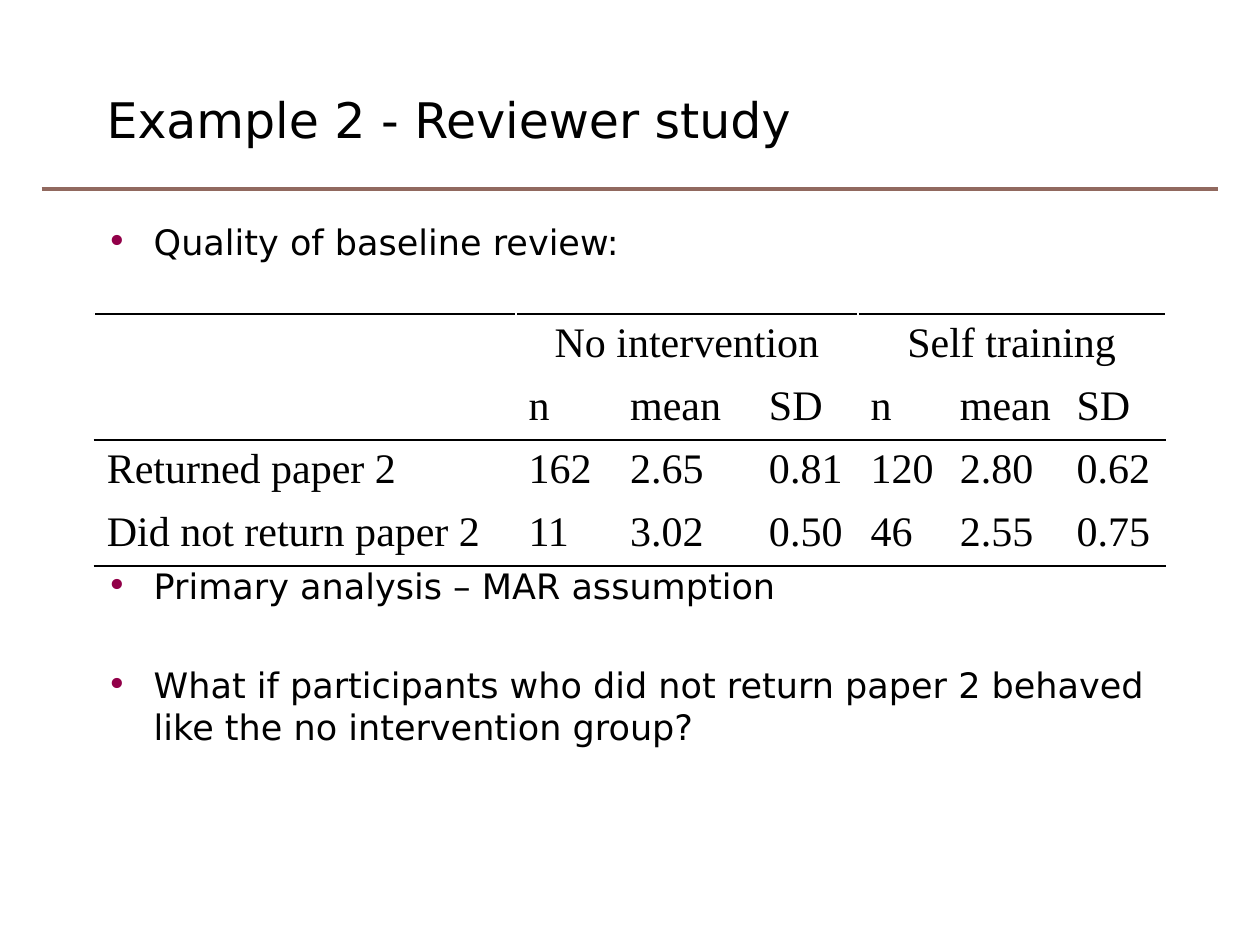
from dataclasses import dataclass

from lxml.etree import SubElement
from pptx import Presentation
from pptx.dml.color import RGBColor
from pptx.enum.shapes import MSO_CONNECTOR
from pptx.enum.text import MSO_ANCHOR, PP_ALIGN
from pptx.oxml.ns import qn
from pptx.slide import Slide
from pptx.table import _Cell
from pptx.text.text import Font, _Paragraph
from pptx.util import Cm, Pt

COLORS = {"text": "000000", "paper": "FFFFFF", "rule": "91695F", "bullet": "920049"}
BODY_FONT = "DejaVu Sans"
TABLE_FONT = "Times New Roman"
LEFT = Cm(1.9)


@dataclass(frozen=True)
class Bullet:
    text: str
    space_before: float


@dataclass(frozen=True)
class Row:
    cells: tuple[str, ...]
    top: str = "paper"
    bottom: str = "paper"


BULLETS = (
    Bullet("Quality of baseline review:", 0),
    Bullet("Primary analysis – MAR assumption", 172.7),
    Bullet("What if participants who did not return paper 2 behaved "
           "like the no intervention group?", 32.7),
)
ROWS = (
    Row(("", "No intervention", "", "", "Self training", "", ""), top="text"),
    Row(("", "n", "mean", "SD", "n", "mean", "SD"), bottom="text"),
    Row(("Returned paper 2", "162", "2.65", "0.81", "120", "2.80", "0.62"), top="text"),
    Row(("Did not return paper 2", "11", "3.02", "0.50", "46", "2.55", "0.75"), bottom="text"),
)
COLUMN_WIDTHS = (8.5, 2.05, 2.8, 2.05, 1.8, 2.35, 2.05)
GROUP_STARTS = (1, 4)
GROUP_SIZE = 3
ROW_HEIGHT = 1.22


def color(name: str) -> RGBColor:
    return RGBColor.from_string(COLORS[name])


def style_font(font: Font, name: str, size: float) -> None:
    font.name = name
    font.size = Pt(size)
    font.color.rgb = color("text")


def add_rule(slide: Slide) -> None:
    rule = slide.shapes.add_connector(
        MSO_CONNECTOR.STRAIGHT, Cm(0.84), Cm(3.81), Cm(24.56), Cm(3.81))
    rule.line.color.rgb = color("rule")
    rule.line.width = Pt(1.75)
    SubElement(rule._element.spPr, qn("a:effectLst"))


def add_title(slide: Slide, text: str) -> None:
    text_frame = slide.shapes.add_textbox(LEFT, Cm(1.27), Cm(21.74), Cm(2.26)).text_frame
    text_frame.word_wrap = True
    text_frame.vertical_anchor = MSO_ANCHOR.MIDDLE
    text_frame.text = text
    style_font(text_frame.paragraphs[0].runs[0].font, BODY_FONT, 28)


def format_bullet(paragraph: _Paragraph) -> None:
    properties = paragraph._p.get_or_add_pPr()
    properties.set("marL", str(Cm(0.95)))
    properties.set("indent", str(-Cm(0.95)))
    bullet_color = SubElement(properties, qn("a:buClr"))
    SubElement(bullet_color, qn("a:srgbClr"), val=COLORS["bullet"])
    SubElement(properties, qn("a:buFont"), typeface=BODY_FONT)
    SubElement(properties, qn("a:buChar"), char="•")


def add_bullets(slide: Slide, bullets: tuple[Bullet, ...]) -> None:
    text_frame = slide.shapes.add_textbox(LEFT, Cm(4.32), Cm(21.59), Cm(12.6)).text_frame
    text_frame.word_wrap = True
    text_frame.text = "\n".join(bullet.text for bullet in bullets)
    for paragraph, bullet in zip(text_frame.paragraphs, bullets):
        format_bullet(paragraph)
        if bullet.space_before:
            paragraph.space_before = Pt(bullet.space_before)
        style_font(paragraph.runs[0].font, BODY_FONT, 20)


def format_cell(cell: _Cell, row: Row) -> None:
    properties = cell._tc.get_or_add_tcPr()
    borders = {"a:lnL": "paper", "a:lnR": "paper", "a:lnT": row.top, "a:lnB": row.bottom}
    for tag, name in borders.items():
        border = SubElement(properties, qn(tag), w=str(Pt(1)))
        fill = SubElement(border, qn("a:solidFill"))
        SubElement(fill, qn("a:srgbClr"), val=COLORS[name])
    cell.fill.solid()
    cell.fill.fore_color.rgb = color("paper")


def add_results_table(slide: Slide, rows: tuple[Row, ...]) -> None:
    table = slide.shapes.add_table(
        len(rows), len(COLUMN_WIDTHS), LEFT, Cm(6.33),
        Cm(sum(COLUMN_WIDTHS)), Cm(ROW_HEIGHT * len(rows))).table
    table.first_row = False
    table.horz_banding = False
    for column, width in zip(table.columns, COLUMN_WIDTHS):
        column.width = Cm(width)
    for row_index, row in enumerate(rows):
        table.rows[row_index].height = Cm(ROW_HEIGHT)
        for column_index, text in enumerate(row.cells):
            cell = table.cell(row_index, column_index)
            format_cell(cell, row)
            cell.text = text
            paragraph = cell.text_frame.paragraphs[0]
            style_font(paragraph.font, TABLE_FONT, 24)
            for run in paragraph.runs:
                style_font(run.font, TABLE_FONT, 24)
    for start in GROUP_STARTS:
        heading = table.cell(0, start)
        heading.merge(table.cell(0, start + GROUP_SIZE - 1))
        heading.text_frame.paragraphs[0].alignment = PP_ALIGN.CENTER


def main() -> None:
    presentation = Presentation()
    presentation.slide_width = Cm(25.4)
    presentation.slide_height = Cm(19.05)
    slide = presentation.slides.add_slide(presentation.slide_layouts[6])
    add_rule(slide)
    add_title(slide, "Example 2 - Reviewer study")
    add_bullets(slide, BULLETS)
    add_results_table(slide, ROWS)
    presentation.save("out.pptx")


if __name__ == "__main__":
    main()
